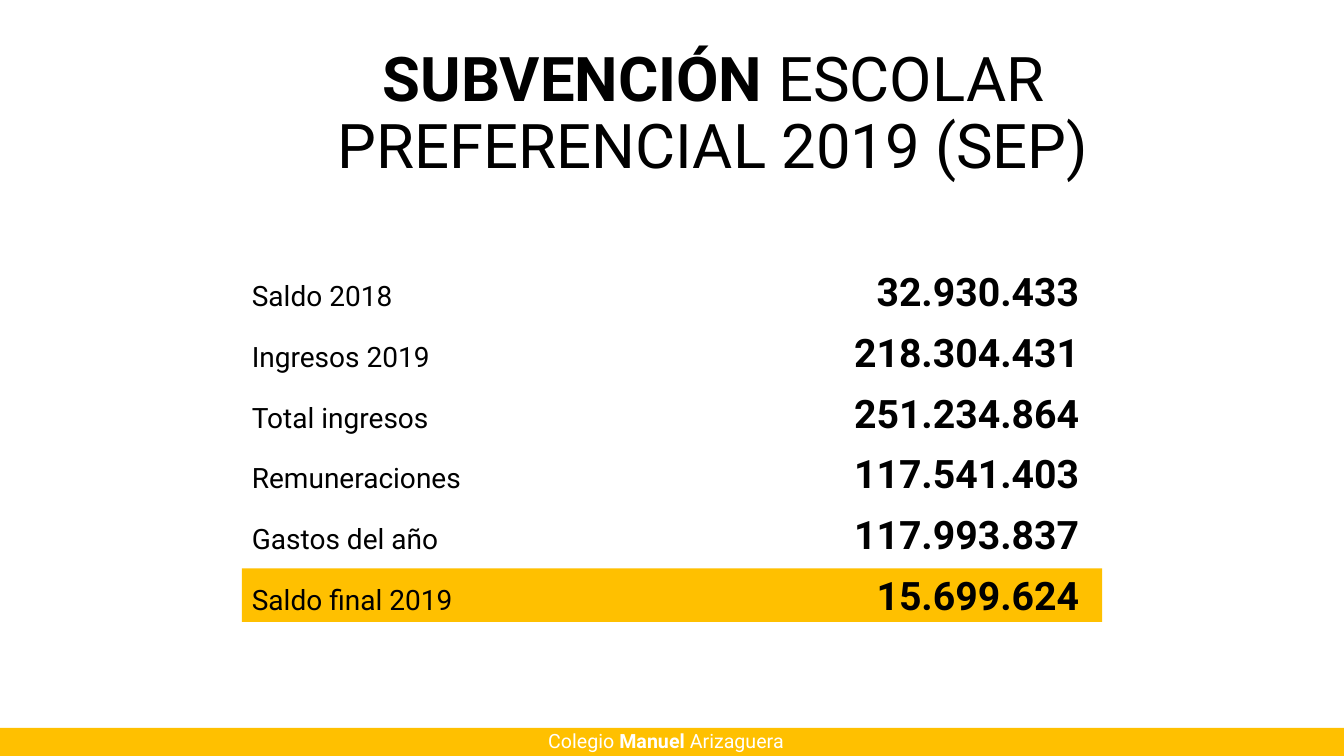
from lxml.etree import SubElement
from pptx import Presentation
from pptx.dml.color import RGBColor
from pptx.enum.shapes import MSO_SHAPE as Preset
from pptx.enum.text import PP_ALIGN as Align
from pptx.oxml.ns import qn
from pptx.util import Inches, Pt

BLACK = RGBColor(0x00, 0x00, 0x00)
WHITE = RGBColor(0xFF, 0xFF, 0xFF)
AMBER = RGBColor(0xFF, 0xC0, 0x00)

COLUMNS, ROWS = 200, 150
BALANCE_LEFT, BALANCE_WIDTH = 36, 128
BALANCE_TOP, BALANCE_PITCH = 52.6, 12.04
AMOUNT_TAB = 123.1

BALANCE = [
    ("Saldo 2018", "32.930.433"),
    ("Ingresos 2019", "218.304.431"),
    ("Total ingresos", "251.234.864"),
    ("Remuneraciones", "117.541.403"),
    ("Gastos del año", "117.993.837"),
    ("Saldo final 2019", "15.699.624"),
]


class SlideBuilder:
    """Places elements on a grid of COLUMNS by ROWS; boxes are (left, top, width, height)."""

    font_name = "Roboto"

    def __init__(self, presentation):
        self.column = presentation.slide_width / COLUMNS
        self.row = presentation.slide_height / ROWS
        self.slide = presentation.slides.add_slide(presentation.slide_layouts[6])

    def place(self, box):
        left, top, width, height = box
        return (int(left * self.column), int(top * self.row),
                int(width * self.column), int(height * self.row))

    def bar(self, box):
        shape = self.slide.shapes.add_shape(Preset.RECTANGLE, *self.place(box))
        shape.shadow.inherit = False
        shape.fill.solid()
        shape.fill.fore_color.rgb = AMBER
        shape.line.fill.background()

    def text(self, box, lines, color=BLACK, align=Align.LEFT, spacing=0.9, right_tab=None):
        """Each line is a list of (text, size, bold) runs."""
        frame = self.slide.shapes.add_textbox(*self.place(box)).text_frame
        frame.word_wrap = True
        for index, runs in enumerate(lines):
            paragraph = frame.add_paragraph() if index else frame.paragraphs[0]
            paragraph.alignment = align
            paragraph.line_spacing = spacing
            if right_tab:
                self.add_right_tab(paragraph, right_tab)
            paragraph.font.name = self.font_name
            paragraph.font.color.rgb = color
            for content, size, bold in runs:
                run = paragraph.add_run()
                run.text = content
                run.font.size = Pt(size)
                run.font.bold = bold

    def add_right_tab(self, paragraph, position):
        properties = paragraph._p.get_or_add_pPr()
        tabs = SubElement(properties, qn("a:tabLst"))
        SubElement(tabs, qn("a:tab"), pos=str(int(position * self.column)), algn="r")

    def balance_row(self, top, label, amount):
        self.text((BALANCE_LEFT, top, BALANCE_WIDTH, 12),
                  [[(label + "\t", 20, False), (amount, 28, True)]],
                  spacing=Pt(31.8), right_tab=AMOUNT_TAB)


def main():
    presentation = Presentation()
    presentation.slide_width = Inches(13.33)
    presentation.slide_height = Inches(7.5)
    builder = SlideBuilder(presentation)

    builder.text((42.3, 8.6, 127.8, 27),
                 [[("SUBVENCIÓN", 44, True), (" ESCOLAR", 44, False)],
                  [("PREFERENCIAL 2019 (SEP)", 44, False)]],
                 align=Align.CENTER)

    final_top = BALANCE_TOP + (len(BALANCE) - 1) * BALANCE_PITCH
    builder.bar((BALANCE_LEFT, final_top, BALANCE_WIDTH, 10.6))
    for index, (label, amount) in enumerate(BALANCE):
        builder.balance_row(BALANCE_TOP + index * BALANCE_PITCH, label, amount)

    builder.bar((0, 144.4, COLUMNS, 5.6))
    builder.text((80.1, 144.2, 40, 7),
                 [[("Colegio ", 14, False), ("Manuel ", 14, True), ("Arizaguera", 14, False)]],
                 color=WHITE)

    presentation.save("out.pptx")


if __name__ == "__main__":
    main()
